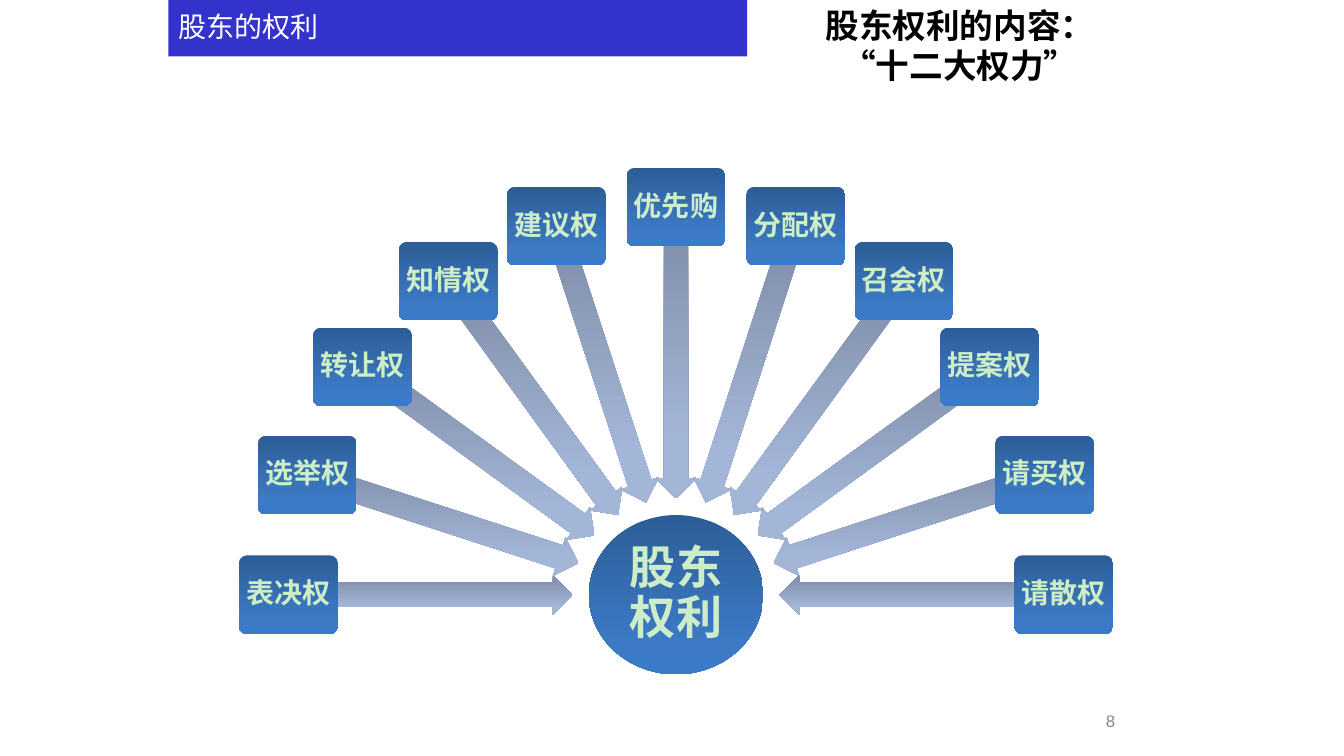
from copy import deepcopy
from math import cos, sin, radians
from lxml.etree import SubElement
from pptx import Presentation
from pptx.dml.color import RGBColor
from pptx.enum.shapes import MSO_SHAPE
from pptx.enum.text import MSO_ANCHOR, PP_ALIGN
from pptx.oxml.ns import qn
from pptx.util import Inches, Pt

# Content
TITLE = "股东的权利"
HEAD = ["股东权利的内容：", "“十二大权力”"]
HUB = "股东权利"
RIGHTS = ["表决权", "选举权", "转让权", "知情权", "建议权", "优先购",
          "分配权", "召会权", "提案权", "请买权", "请散权"]
PAGE = "8"

# Colours and fonts
BAR = RGBColor(0x33, 0x33, 0xCC)
WHITE = RGBColor(0xFF, 0xFF, 0xFF)
BLACK = RGBColor(0, 0, 0)
GREY = RGBColor(0x89, 0x89, 0x89)
MINT = RGBColor(0xCC, 0xED, 0xC7)
BLUES = [(0, RGBColor(0x2D, 0x5D, 0x97)), (0.8, RGBColor(0x3C, 0x7A, 0xC5)),
         (1, RGBColor(0x39, 0x7B, 0xC9))]
STEELS = [(0, RGBColor(0x7C, 0x8B, 0xA5)), (0.8, RGBColor(0xA4, 0xB6, 0xD8)),
          (1, RGBColor(0xA3, 0xB6, 0xDB))]
CJK = "Noto Sans CJK SC"

# Layout of the fan, in inches
CX, CY = 6.705, 5.9
RADIUS = 3.845
HUB_W, HUB_H = 1.73, 1.58
BOX_W, BOX_H = 0.98, 0.78
ARROW_H = 0.4
GAP, DIP = 1.025, 0.07

deck = Presentation()
deck.slide_width, deck.slide_height = Inches(13.33), Inches(7.5)
slide = deck.slides.add_slide(deck.slide_layouts[6])


def add_part(kind, x, y, wide, high):
    """Add a plain shape centred on x, y."""
    part = slide.shapes.add_shape(kind, Inches(x - wide / 2), Inches(y - high / 2),
                                  Inches(wide), Inches(high))
    part.shadow.inherit = False
    part.line.fill.background()
    return part


def shade(part, stops):
    """Fill from top to bottom, whatever the rotation."""
    part.fill.gradient()
    part.fill.gradient_angle = 270
    grad = part._element.spPr.find(qn("a:gradFill"))
    grad.set("rotWithShape", "0")
    marks = grad.find(qn("a:gsLst"))
    marks.append(deepcopy(marks[-1]))
    for mark, (place, color) in zip(part.fill.gradient_stops, stops):
        mark.position = place
        mark.color.rgb = color


def write(part, lines, size, font, color, bold=False, align=PP_ALIGN.CENTER,
          anchor=MSO_ANCHOR.MIDDLE, inset=None, tight=False, after=None, wrap=True):
    frame = part.text_frame
    frame.word_wrap = wrap
    frame.vertical_anchor = anchor
    if inset is not None:
        frame.margin_left = frame.margin_right = Inches(inset)
        frame.margin_top = frame.margin_bottom = Inches(inset)
    for i, line in enumerate(lines):
        para = frame.add_paragraph() if i else frame.paragraphs[0]
        para.alignment = align
        if tight:
            para.line_spacing = 0.9
        if after:
            space = SubElement(para._p.get_or_add_pPr(), qn("a:spcAft"))
            SubElement(space, qn("a:spcPct")).set("val", str(after * 1000))
        run = para.add_run()
        run.text = line
        run.font.size, run.font.bold = Pt(size), bold
        run.font.name = font
        run.font.color.rgb = color
        SubElement(run._r.get_or_add_rPr(), qn("a:ea")).set("typeface", CJK)


# Page number
page = slide.shapes.add_textbox(Inches(8.83), Inches(6.95), Inches(2.33), Inches(0.4))
write(page, [PAGE], 12, "Arial", GREY, align=PP_ALIGN.RIGHT)

# Hub
hub = add_part(MSO_SHAPE.OVAL, CX, CY, HUB_W, HUB_H)
shade(hub, BLUES)
write(hub, [HUB], 33, CJK, MINT, bold=True, inset=0.02, tight=True, after=35)

# Fan of rights, each with an arrow to the hub
step = 180 / (len(RIGHTS) - 1)
for i, name in enumerate(RIGHTS):
    turn = 180 + i * step
    dx, dy = cos(radians(turn)), sin(radians(turn))
    near = GAP - DIP * dy ** 2
    mid = (RADIUS + near) / 2

    arrow = add_part(MSO_SHAPE.LEFT_ARROW, CX + mid * dx, CY + mid * dy,
                     RADIUS - near, ARROW_H)
    arrow.adjustments[0], arrow.adjustments[1] = 0.6, 0.5
    arrow.rotation = turn % 360
    shade(arrow, STEELS)

    box = add_part(MSO_SHAPE.ROUNDED_RECTANGLE, CX + RADIUS * dx, CY + RADIUS * dy,
                   BOX_W, BOX_H)
    box.adjustments[0] = 0.1
    shade(box, BLUES)
    write(box, [name], 20, CJK, MINT, bold=True, inset=0.03, tight=True, after=35)

# Heading and title bar
head = slide.shapes.add_textbox(Inches(8.08), 0, Inches(2.88), Inches(0.9))
write(head, HEAD, 24, "Arial", BLACK, bold=True, anchor=MSO_ANCHOR.TOP, wrap=False)

bar = add_part(MSO_SHAPE.RECTANGLE, 4.54, 0.28, 5.74, 0.56)
bar.fill.solid()
bar.fill.fore_color.rgb = BAR
write(bar, [TITLE], 20, "Calibri", WHITE, align=PP_ALIGN.LEFT, tight=True)

deck.save("out.pptx")
